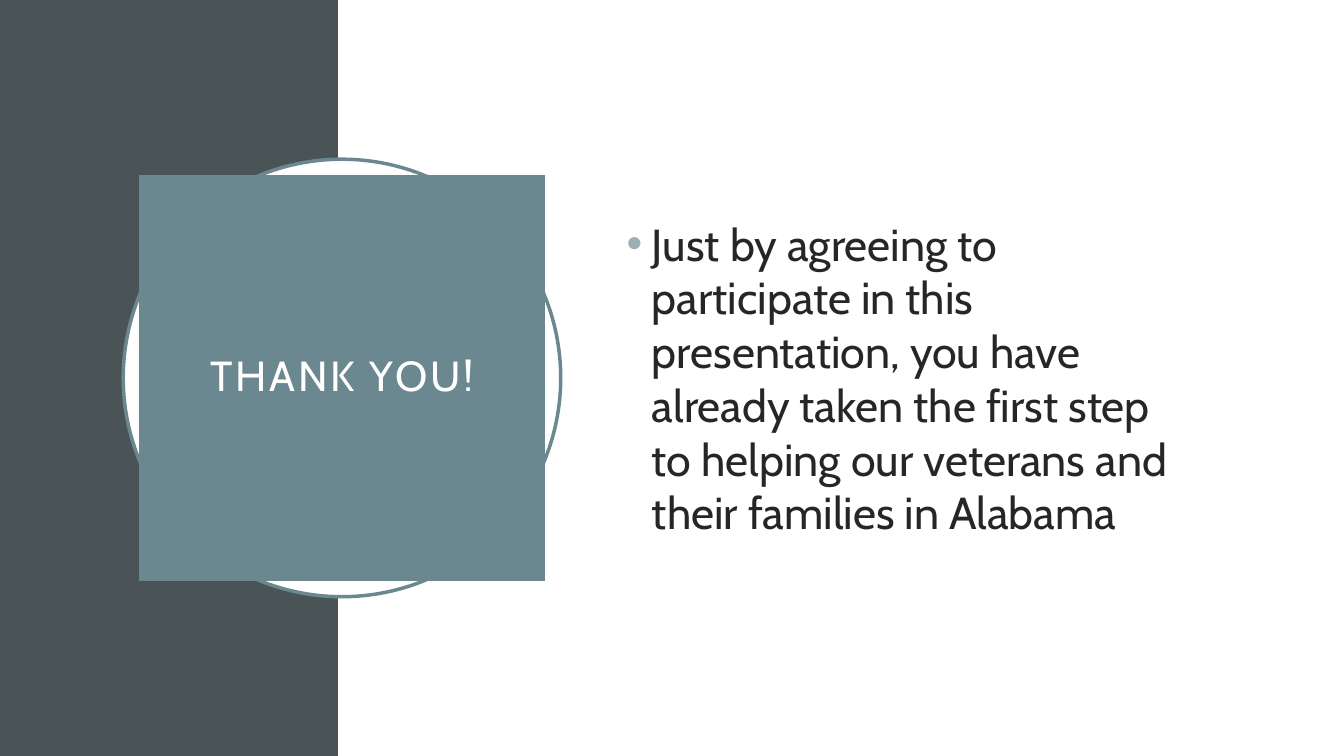
from dataclasses import dataclass

from lxml import etree
from pptx import Presentation
from pptx.dml.color import RGBColor
from pptx.enum.shapes import MSO_SHAPE
from pptx.enum.text import MSO_ANCHOR, PP_ALIGN
from pptx.oxml.ns import qn
from pptx.util import Pt

RECTANGLE = MSO_SHAPE.RECTANGLE
OVAL = MSO_SHAPE.OVAL
MIDDLE = MSO_ANCHOR.MIDDLE
LEFT = PP_ALIGN.LEFT
CENTER = PP_ALIGN.CENTER


@dataclass(frozen=True)
class Theme:
    font: str = "Cabin"
    slate: str = "4A5356"
    teal: str = "6B8891"
    bullet: str = "9BAFB5"
    ink: str = "262626"
    white: str = "FFFFFF"
    title_size: float = 30
    body_size: float = 32


THEME = Theme()
SLIDE_WIDTH, SLIDE_HEIGHT = 960, 540
BAND_WIDTH = 241.6
BADGE_CENTER = 244.3
RING_SIZE, BADGE_SIZE = 312.5, 290


def centered_square(size):
    return BADGE_CENTER - size / 2, (SLIDE_HEIGHT - size) / 2, size, size


def add_panel(slide, kind, box, fill, line=None, line_width=2.5):
    shape = slide.shapes.add_shape(kind, *(Pt(length) for length in box))
    shape.shadow.inherit = False
    shape.fill.solid()
    shape.fill.fore_color.rgb = RGBColor.from_string(fill)
    if line:
        shape.line.color.rgb = RGBColor.from_string(line)
        shape.line.width = Pt(line_width)
    else:
        shape.line.fill.background()
    return shape


def add_bullet(paragraph, color, indent):
    properties = paragraph._p.get_or_add_pPr()
    properties.set("marL", str(Pt(indent)))
    properties.set("indent", str(-Pt(indent)))
    bullet_color = etree.SubElement(properties, qn("a:buClr"))
    etree.SubElement(bullet_color, qn("a:srgbClr"), val=color)
    etree.SubElement(properties, qn("a:buFont"), typeface="Arial")
    etree.SubElement(properties, qn("a:buChar"), char="•")


def write_text(shape, text, *, size, color, align=LEFT, line_spacing=1.0,
               space_before=0, letter_spacing=0, insets=(7.2, 3.6), bullet=None):
    frame = shape.text_frame
    frame.word_wrap = True
    frame.vertical_anchor = MIDDLE
    frame.margin_left = frame.margin_right = Pt(insets[0])
    frame.margin_top = frame.margin_bottom = Pt(insets[1])
    paragraph = frame.paragraphs[0]
    paragraph.alignment = align
    paragraph.line_spacing = line_spacing
    paragraph.space_before = Pt(space_before)
    if bullet:
        add_bullet(paragraph, bullet, 18)
    run = paragraph.add_run()
    run.text = text
    run.font.name = THEME.font
    run.font.size = Pt(size)
    run.font.color.rgb = RGBColor.from_string(color)
    if letter_spacing:
        run._r.get_or_add_rPr().set("spc", str(round(letter_spacing * 100)))


def main():
    presentation = Presentation()
    presentation.slide_width = Pt(SLIDE_WIDTH)
    presentation.slide_height = Pt(SLIDE_HEIGHT)
    slide = presentation.slides.add_slide(presentation.slide_layouts[6])

    add_panel(slide, RECTANGLE, (0, 0, BAND_WIDTH, SLIDE_HEIGHT), THEME.slate)
    add_panel(slide, RECTANGLE,
              (BAND_WIDTH, 0, SLIDE_WIDTH - BAND_WIDTH, SLIDE_HEIGHT), THEME.white)
    add_panel(slide, OVAL, centered_square(RING_SIZE), THEME.white, line=THEME.teal)

    badge = add_panel(slide, RECTANGLE, centered_square(BADGE_SIZE), THEME.teal)
    write_text(badge, "THANK YOU!", size=THEME.title_size, color=THEME.white,
               align=CENTER, line_spacing=0.9, letter_spacing=2, insets=(14.4, 14.4))

    message = slide.shapes.add_textbox(Pt(440.6), Pt(110.2), Pt(419), Pt(319))
    write_text(message,
               "Just by agreeing to participate in this presentation, you have already "
               "taken the first step to helping our veterans and their families in Alabama",
               size=THEME.body_size, color=THEME.ink, space_before=10,
               bullet=THEME.bullet)

    presentation.save("out.pptx")


if __name__ == "__main__":
    main()
